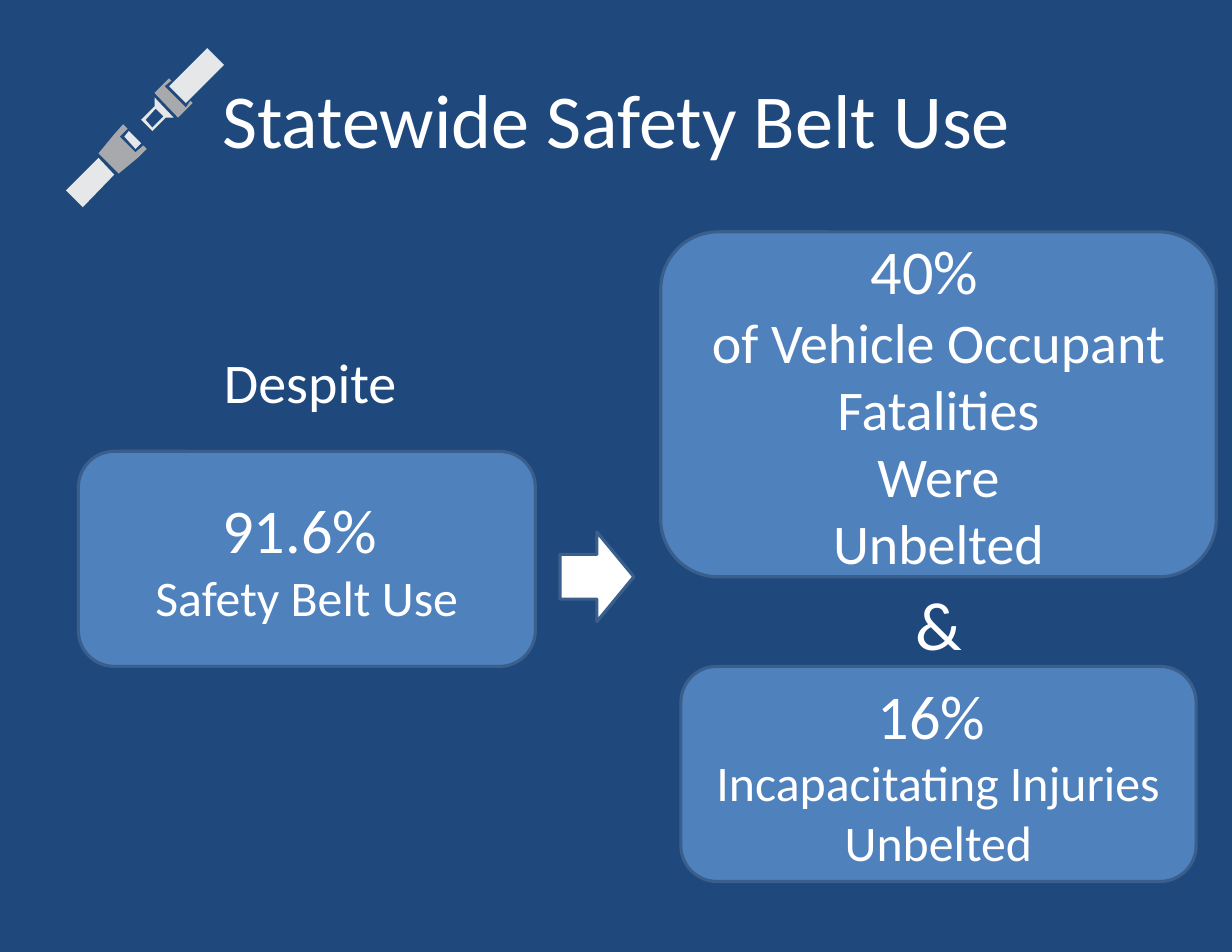
from pptx import Presentation
from pptx import util as u
from pptx.dml.color import RGBColor
from pptx.enum import shapes as s, text as t

COLORS = {"background": "1F497D", "box": "4F81BD", "outline": "3A5F8C",
          "white": "FFFFFF", "strap": "E6E7E8", "buckle": "A7A9AC"}
FONT = "Calibri"
WIDE_INSETS = {"margin_left": 0.11, "margin_right": 0.11,
               "margin_top": 0.06, "margin_bottom": 0.06}

# Content: (text, size) lines
TITLE = [("Statewide Safety Belt Use", 49)]
BOXES = [
    ((5.9, 2.07, 4.96, 3.08), {}, [("40%  ", 40), ("of Vehicle Occupant Fatalities", 36),
                                   ("Were", 36), ("Unbelted", 36)]),
    ((6.08, 5.95, 4.6, 1.92), WIDE_INSETS, [("16% ", 40), ("Incapacitating Injuries", 32),
                                            ("Unbelted", 32)]),
    ((0.7, 4.03, 4.08, 1.92), WIDE_INSETS, [("91.6% ", 40), ("Safety Belt Use", 32)]),
]
LABELS = [((1.64, 3.05, 2.26, 0.71), [("Despite", 36)]),
          ((7.58, 5.15, 1.6, 0.84), [("&", 44)])]
ARROW = (5, 4.75, 0.66, 0.8)

# Seat belt icon: (color, contours), corner points in inches
BELT = [
    ("strap", [[(0.88, 1.41), (1.02, 1.56), (0.74, 1.85), (0.59, 1.7)]]),
    ("strap", [[(1.21, 1.33), (1.11, 1.22), (1.15, 1.17), (1.26, 1.28)]]),
    ("buckle", [[(1.31, 1.33), (1.23, 1.41), (1.06, 1.55), (0.88, 1.37), (1.02, 1.2),
                 (1.1, 1.11), (1.14, 1.15), (1.07, 1.22), (1.21, 1.36), (1.28, 1.3)]]),
    ("buckle", [[(1.47, 0.77), (1.66, 0.96), (1.7, 0.9), (1.72, 0.92), (1.59, 1.05),
                 (1.38, 0.83), (1.51, 0.7), (1.53, 0.72)]]),
    ("strap", [[(1.38, 0.95), (1.26, 1.07), (1.36, 1.17), (1.48, 1.05), (1.55, 1.05),
                (1.38, 0.87)],
               [(1.46, 1.04), (1.36, 1.14), (1.3, 1.07), (1.39, 0.97)]]),
    ("strap", [[(1.85, 0.43), (2, 0.58), (1.66, 0.92), (1.51, 0.77)]]),
]


def color(name):
    return RGBColor.from_string(COLORS[name])


def inches(values):
    return [u.Inches(value) for value in values]


def paint(shape, fill, outline=None):
    shape.shadow.inherit = False
    shape.fill.solid()
    shape.fill.fore_color.rgb = color(fill)
    if outline:
        shape.line.color.rgb = color(outline)
        shape.line.width = u.Pt(2)
    else:
        shape.line.fill.background()


def write(shape, lines, insets, anchor=t.MSO_ANCHOR.MIDDLE, auto_size=t.MSO_AUTO_SIZE.NONE):
    frame = shape.text_frame
    settings = {"word_wrap": True, "vertical_anchor": anchor, "auto_size": auto_size}
    settings.update({name: u.Inches(value) for name, value in insets.items()})
    for name, value in settings.items():
        setattr(frame, name, value)
    for index, (line, size) in enumerate(lines):
        paragraph = frame.add_paragraph() if index else frame.paragraphs[0]
        paragraph.alignment = t.PP_ALIGN.CENTER
        run = paragraph.add_run()
        run.text = line
        for name, value in {"name": FONT, "size": u.Pt(size)}.items():
            setattr(run.font, name, value)
        run.font.color.rgb = color("white")


def draw_belt(slide):
    for fill, contours in BELT:
        points = [inches(point) for point in contours[0]]
        builder = slide.shapes.build_freeform(*points[0])
        builder.add_line_segments(points[1:], close=True)
        for contour in contours[1:]:
            points = [inches(point) for point in contour]
            builder.move_to(*points[0])
            builder.add_line_segments(points[1:], close=True)
        paint(builder.convert_to_shape(), fill)


def main():
    presentation = Presentation()
    presentation.slide_width, presentation.slide_height = inches((11, 8.5))
    slide = presentation.slides.add_slide(presentation.slide_layouts[5])
    slide.background.fill.solid()
    slide.background.fill.fore_color.rgb = color("background")

    # Title
    title = slide.shapes.title
    title.left, title.top, title.width, title.height = inches((0.55, 0.34, 9.9, 1.42))
    write(title, TITLE, WIDE_INSETS)

    # Statistic boxes
    for place, insets, lines in BOXES:
        box = slide.shapes.add_shape(s.MSO_SHAPE.ROUNDED_RECTANGLE, *inches(place))
        paint(box, "box", "outline")
        write(box, lines, insets)

    draw_belt(slide)

    # Linking words and arrow
    for place, lines in LABELS:
        label = slide.shapes.add_textbox(*inches(place))
        write(label, lines, {}, t.MSO_ANCHOR.TOP, t.MSO_AUTO_SIZE.SHAPE_TO_FIT_TEXT)
    arrow = slide.shapes.add_shape(s.MSO_SHAPE.RIGHT_ARROW, *inches(ARROW))
    paint(arrow, "white", "outline")

    presentation.save("out.pptx")


if __name__ == "__main__":
    main()
